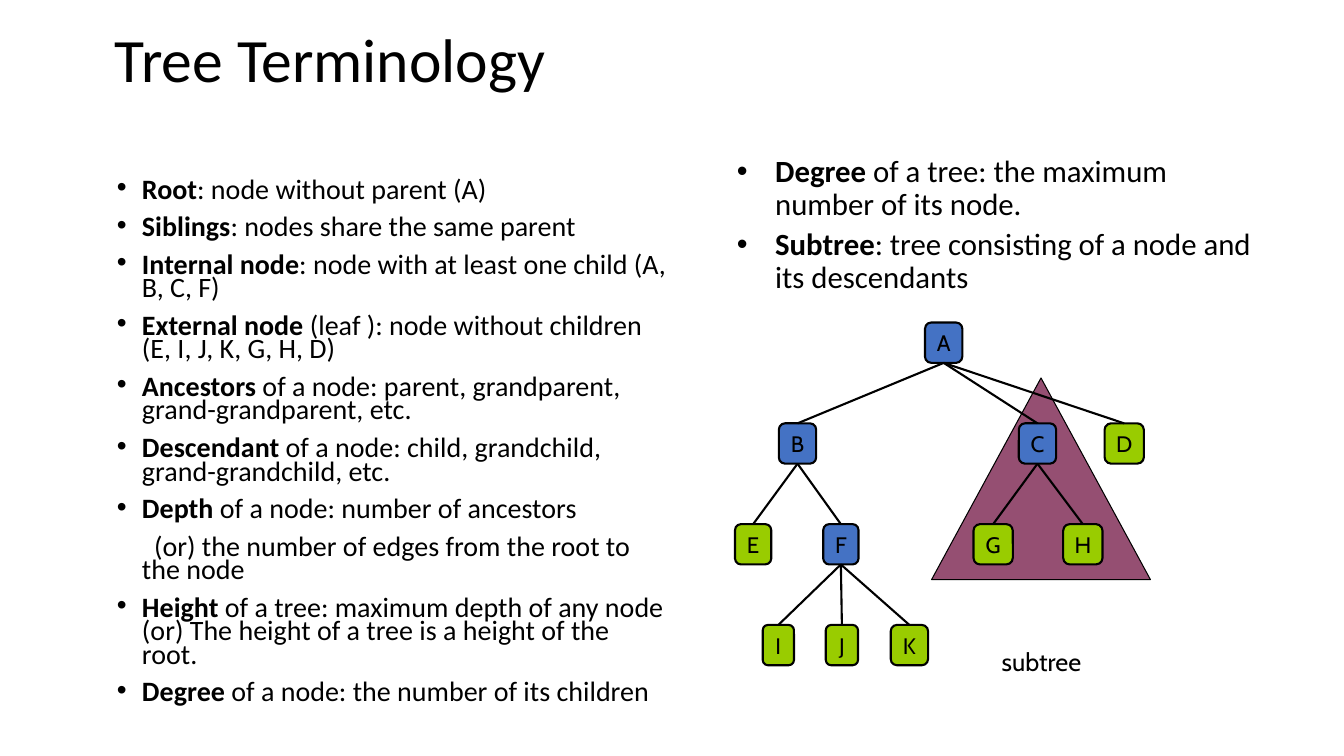
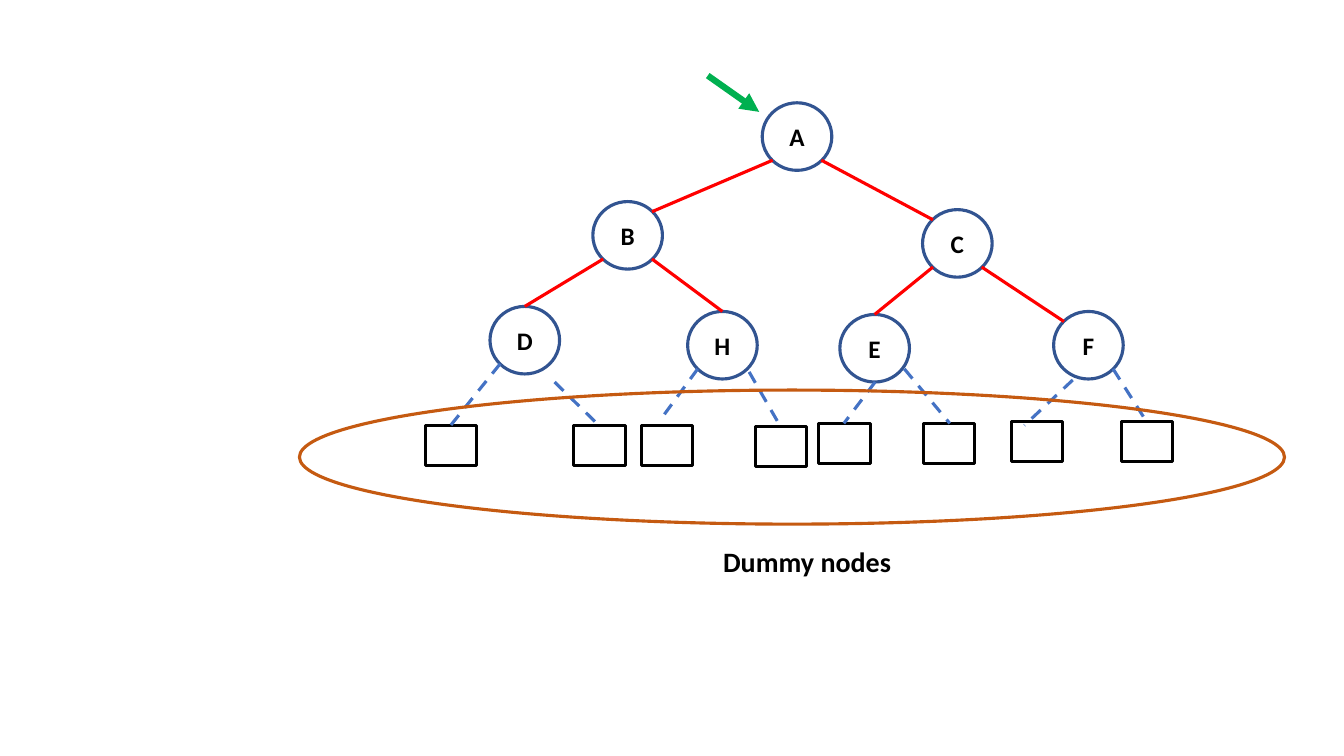
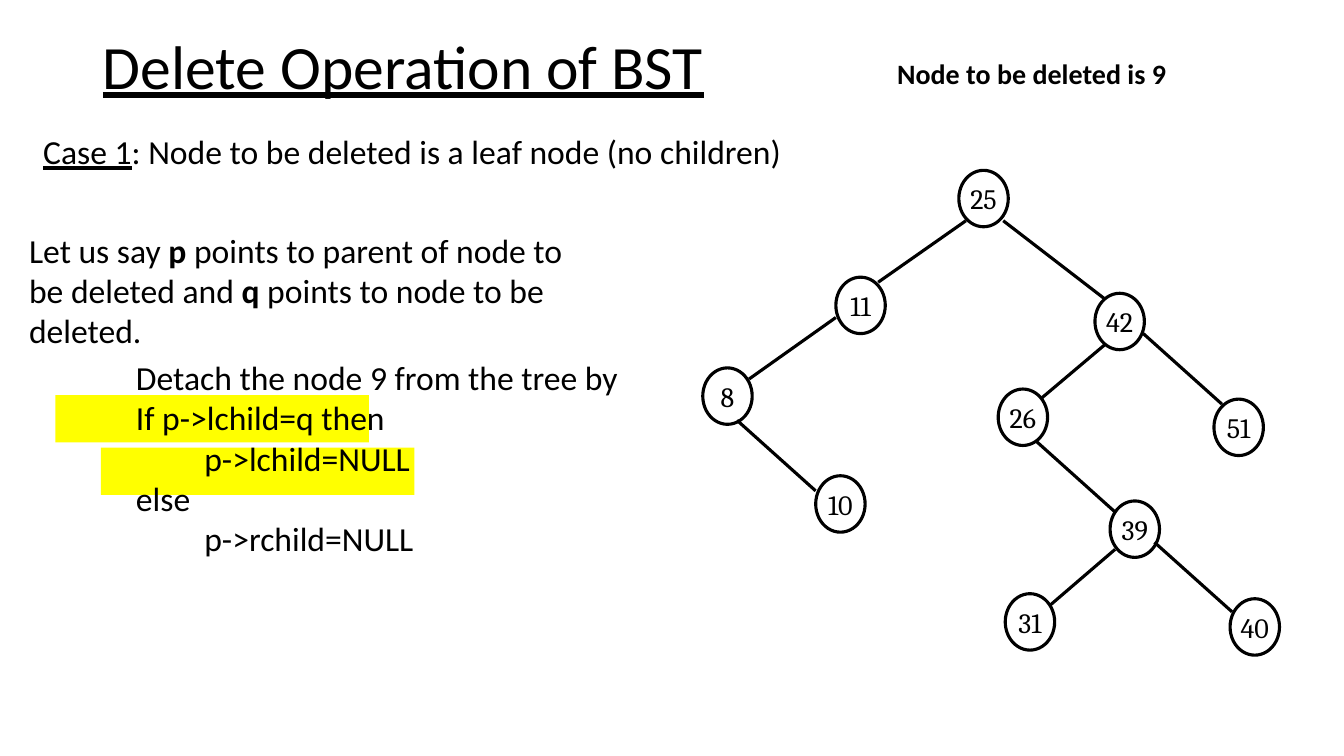
from dataclasses import dataclass

from lxml.etree import SubElement
from pptx import Presentation
from pptx.dml.color import RGBColor
from pptx.enum.dml import MSO_LINE
from pptx.enum.shapes import MSO_CONNECTOR, MSO_SHAPE as SHAPE
from pptx.enum.text import MSO_ANCHOR as ANCHOR, MSO_AUTO_SIZE, PP_ALIGN as ALIGN
from pptx.oxml.ns import qn
from pptx.util import Inches, Pt


@dataclass(frozen=True)
class Theme:
    black: str = "000000"
    blue: str = "4472C4"
    navy: str = "325491"
    lime: str = "99CC00"
    plum: str = "954F72"
    red: str = "FF0000"
    green: str = "00B050"
    orange: str = "C55A11"
    yellow: str = "FFFF00"
    body_font: str = "Calibri"
    label_font: str = "Cabin"
    number_font: str = "Cambria"
    title_size: int = 44
    text_size: int = 24
    column_size: int = 22
    list_size: int = 20
    label_size: int = 18
    node_size: int = 16


theme = Theme()


def add_box(slide, box, paragraphs=(), kind=None, fill=None, line=None, weight=2.25,
            font=theme.body_font, size=theme.list_size, align=ALIGN.LEFT):
    """Add a text box, or a preset shape if kind is given.

    Each paragraph is a list of (text, style) runs; style holds "b" and "u" flags.
    """
    place = [Inches(length) for length in box]
    if kind is None:
        shape = slide.shapes.add_textbox(*place)
    else:
        shape = slide.shapes.add_shape(kind, *place)
        shape.shadow.inherit = False
        if fill:
            shape.fill.solid()
            shape.fill.fore_color.rgb = RGBColor.from_string(fill)
        else:
            shape.fill.background()
        if line:
            shape.line.color.rgb = RGBColor.from_string(line)
            shape.line.width = Pt(weight)
        else:
            shape.line.fill.background()
    frame = shape.text_frame
    frame.word_wrap = kind is None
    if kind is not None:
        frame.vertical_anchor = ANCHOR.MIDDLE
        frame.margin_left = frame.margin_right = frame.margin_top = frame.margin_bottom = 0
    for index, runs in enumerate(paragraphs):
        paragraph = frame.add_paragraph() if index else frame.paragraphs[0]
        paragraph.alignment = align
        for text, style in runs:
            run = paragraph.add_run()
            run.text = text
            run.font.name = font
            run.font.size = Pt(size)
            run.font.bold = "b" in style
            run.font.underline = "u" in style
            run.font.color.rgb = RGBColor.from_string(theme.black)
    return shape


def add_line(slide, begin, end, color=theme.black, weight=2.25, dashed=False, arrow=False):
    points = [Inches(length) for length in (*begin, *end)]
    connector = slide.shapes.add_connector(MSO_CONNECTOR.STRAIGHT, *points)
    connector.line.color.rgb = RGBColor.from_string(color)
    connector.line.width = Pt(weight)
    if dashed:
        connector.line.dash_style = MSO_LINE.DASH
    if arrow:
        SubElement(connector.line._get_or_add_ln(), qn("a:tailEnd"), type="triangle")
    SubElement(connector._element.spPr, qn("a:effectLst"))
    return connector


presentation = Presentation()
presentation.slide_width = Inches(13.33)
presentation.slide_height = Inches(7.5)
title_only, blank = presentation.slide_layouts[5], presentation.slide_layouts[6]
terminology, dummy_nodes, deletion = [
    presentation.slides.add_slide(layout) for layout in (title_only, blank, title_only)]

for slide, text, box, underlined in (
        (terminology, "Tree Terminology", (1.04, 0.23, 9, 0.78), False),
        (deletion, "Delete Operation of BST", (0.92, 0.24, 11.5, 0.89), True)):
    title = slide.shapes.title
    title.left, title.top, title.width, title.height = [Inches(length) for length in box]
    frame = title.text_frame
    frame.auto_size = MSO_AUTO_SIZE.NONE
    frame.vertical_anchor = ANCHOR.MIDDLE
    paragraph = frame.paragraphs[0]
    paragraph.alignment = ALIGN.LEFT
    paragraph.line_spacing = 0.9
    run = paragraph.add_run()
    run.text = text
    run.font.name = theme.body_font
    run.font.size = Pt(theme.title_size)
    run.font.underline = underlined
    run.font.color.rgb = RGBColor.from_string(theme.black)

# Tree terminology
add_box(terminology, (9.24, 3.75, 2.17, 2), kind=SHAPE.ISOSCELES_TRIANGLE,
        fill=theme.plum, line=theme.black, weight=0.75)
add_box(terminology, (9.58, 6.36, 1.5, 0.4), [[("subtree", "")]],
        font=theme.label_font, size=theme.label_size, align=ALIGN.CENTER)

node_terms = (
    ("Root", ": node without parent (A)"),
    ("Siblings", ": nodes share the same parent"),
    ("Internal node", ": node with at least one child (A, B, C, F)"),
    ("External node", " (leaf ): node without children (E, I, J, K, G, H, D)"),
    ("Ancestors", " of a node: parent, grandparent, grand-grandparent, etc."),
    ("Descendant", " of a node: child, grandchild, grand-grandchild, etc."),
    ("Depth", " of a node: number of ancestors"),
    ("", "(or) the number of edges from the root to the node"),
    ("Height", " of a tree: maximum depth of any node (or) "
               "The height of a tree is a height of the root."),
    ("Degree", " of a node: the number of its children"),
)
tree_terms = (
    ("Degree", " of a tree: the maximum number of its node."),
    ("Subtree", ": tree consisting of a node and its descendants"),
)
for terms, box, size, indent, line_spacing, space_before in (
        (node_terms, (1.06, 1.74, 5.68, 5.42), theme.list_size, 0.25, 0.7, 10),
        (tree_terms, (7.21, 1.5, 5.31, 1.33), theme.column_size, 0.38, 0.9, 4.4)):
    runs = [[(term, "b"), (meaning, "")] if term else [(meaning, "")]
            for term, meaning in terms]
    column = add_box(terminology, box, runs, size=size)
    for index, paragraph in enumerate(column.text_frame.paragraphs):
        paragraph.line_spacing = line_spacing
        if index:
            paragraph.space_before = Pt(space_before)
        properties = paragraph._p.get_or_add_pPr()
        properties.set("marL", str(Inches(indent)))
        if terms[index][0]:
            properties.set("indent", str(-Inches(indent)))
            SubElement(properties, qn("a:buFont"), typeface="Arial")
            SubElement(properties, qn("a:buChar"), char="•")
        else:
            properties.set("indent", str(Inches(0.12)))

# name: parent, level, centre, width
tree = {
    "A": (None, 0, 9.36, 0.37),
    "B": ("A", 1, 7.91, 0.37),
    "C": ("A", 1, 10.29, 0.37),
    "D": ("A", 1, 11.15, 0.39),
    "E": ("B", 2, 7.47, 0.36),
    "F": ("B", 2, 8.34, 0.35),
    "G": ("C", 2, 9.85, 0.39),
    "H": ("C", 2, 10.74, 0.39),
    "I": ("F", 3, 7.72, 0.31),
    "J": ("F", 3, 8.35, 0.32),
    "K": ("F", 3, 9.02, 0.37),
}
parents = {parent for parent, *_ in tree.values()}
nodes = {}
for name, (parent, level, centre, width) in tree.items():
    nodes[name] = add_box(
        terminology, (centre - width / 2, 3.2 + level, width, 0.4), [[(name, "")]],
        SHAPE.ROUNDED_RECTANGLE, theme.blue if name in parents else theme.lime,
        theme.black, 1.5, theme.label_font, theme.node_size, ALIGN.CENTER)
    if parent:
        edge = add_line(terminology, (0, 0), (1, 1), weight=1.5)
        edge.begin_connect(nodes[parent], 2)
        edge.end_connect(nodes[name], 0)

# Dummy nodes
circle_width, circle_height = 0.69, 0.67
circles = {"A": (7.56, 1.02), "B": (5.88, 2), "C": (9.15, 2.08), "D": (4.86, 3.04),
           "H": (6.82, 3.09), "E": (8.33, 3.12), "F": (10.45, 3.09)}
for name, corner in circles.items():
    add_box(dummy_nodes, (*corner, circle_width, circle_height), [[(name, "b")]],
            SHAPE.OVAL, line=theme.navy, size=theme.label_size, align=ALIGN.CENTER)

sites = {"top": (0.5, 0), "top left": (0.15, 0.15), "top right": (0.85, 0.15),
         "bottom left": (0.15, 0.85), "bottom right": (0.85, 0.85)}
for parent, parent_site, child, child_site in (
        ("A", "bottom left", "B", "top right"),
        ("A", "bottom right", "C", "top left"),
        ("B", "bottom left", "D", "top"),
        ("B", "bottom right", "H", "top"),
        ("C", "bottom left", "E", "top"),
        ("C", "bottom right", "F", "top left")):
    begin, end = [
        (circles[name][0] + circle_width * sites[site][0],
         circles[name][1] + circle_height * sites[site][1])
        for name, site in ((parent, parent_site), (child, child_site))]
    add_line(dummy_nodes, begin, end, theme.red)
add_line(dummy_nodes, (7.02, 0.75), (7.53, 1.11), theme.green, 4.5, arrow=True)

for corner, begin, end in (
        ((4.22, 4.22), (4.96, 3.61), (4.47, 4.22)),
        ((5.69, 4.22), (5.5, 3.79), (5.94, 4.22)),
        ((6.36, 4.22), (6.92, 3.66), (6.59, 4.11)),
        ((7.49, 4.23), (7.43, 3.69), (7.74, 4.23)),
        ((8.12, 4.2), (8.68, 3.79), (8.37, 4.2)),
        ((9.16, 4.2), (8.97, 3.66), (9.42, 4.2)),
        ((10.03, 4.18), (10.64, 3.77), (10.16, 4.22)),
        ((11.12, 4.18), (11.04, 3.66), (11.37, 4.18))):
    add_box(dummy_nodes, (*corner, 0.51, 0.4), kind=SHAPE.RECTANGLE, line=theme.black)
    add_line(dummy_nodes, begin, end, theme.blue, dashed=True)
add_box(dummy_nodes, (2.97, 3.87, 9.77, 1.33), kind=SHAPE.OVAL, line=theme.orange)
add_box(dummy_nodes, (6.73, 5.35, 2.55, 0.44), [[("Dummy nodes", "b")]], align=ALIGN.CENTER)

# Delete operation
for left, top in ((1, 4.44), (0.55, 3.92)):
    add_box(deletion, (left, top, 3.11, 0.47), kind=SHAPE.RECTANGLE, fill=theme.yellow)

case = [[("Case 1", "u"), (": Node to be deleted is a leaf node (no children)", "")]]
pointers = [[("Let us say ", ""), ("p", "b"),
             (" points to parent of node to be deleted and ", ""), ("q ", "b"),
             ("points to node to be deleted.", "")]]
steps = [[(text, "")] for text in (
    "Detach the node 9 from the tree by",
    "If p->lchild=q then",
    "         p->lchild=NULL",
    "else",
    "         p->rchild=NULL")]
for box, paragraphs in (((0.33, 1.25, 7.55, 0.5), case),
                        ((0.19, 2.23, 5.58, 1.72), pointers),
                        ((1.25, 3.49, 5.38, 2.12), steps)):
    add_box(deletion, box, paragraphs, size=theme.text_size)
add_box(deletion, (8.8, 0.51, 3.16, 0.44), [[("Node to be deleted is 9", "b")]])

for number, left, top in (
        (25, 9.51, 1.69), (11, 8.29, 2.75), (42, 10.86, 2.91), (8, 6.97, 3.65),
        (26, 9.9, 3.86), (51, 12.04, 3.96), (10, 8.09, 4.72), (39, 11.01, 4.97),
        (31, 9.97, 5.89), (40, 12.2, 5.94)):
    add_box(deletion, (left, top, 0.49, 0.56), [[(str(number), "")]], SHAPE.OVAL,
            line=theme.black, font=theme.number_font, align=ALIGN.CENTER)
for begin, end in (
        ((9.58, 2.19), (8.71, 2.8)), ((9.95, 2.19), (10.95, 2.96)),
        ((8.29, 3.15), (7.43, 3.76)), ((10.97, 3.41), (10.33, 3.95)),
        ((11.34, 3.31), (12.12, 4.01)), ((7.31, 4.17), (8.09, 4.87)),
        ((10.28, 4.38), (11.06, 5.08)), ((11.06, 5.45), (10.42, 6)),
        ((11.45, 5.38), (12.22, 6.07))):
    add_line(deletion, begin, end)

presentation.save("out.pptx")
